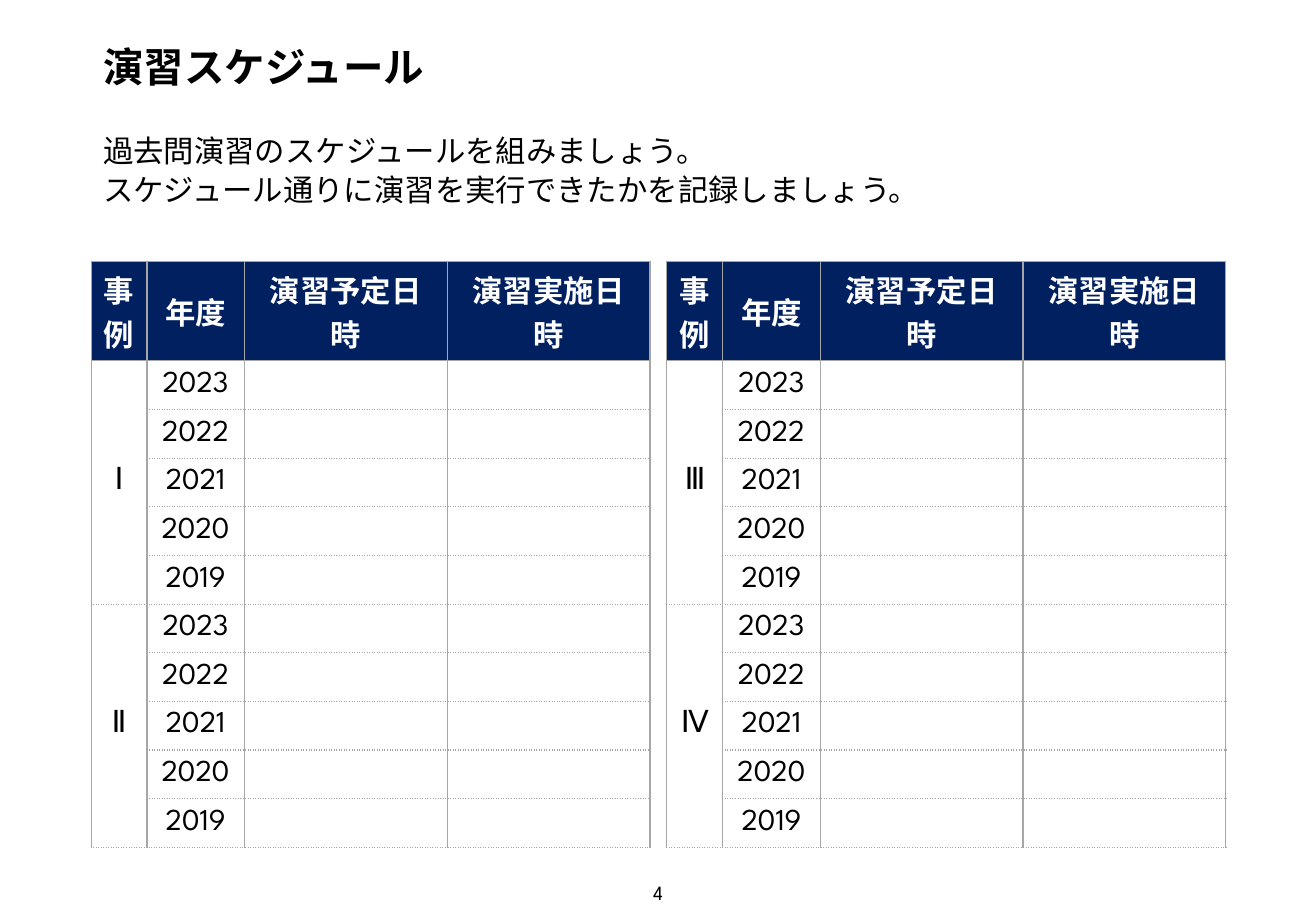
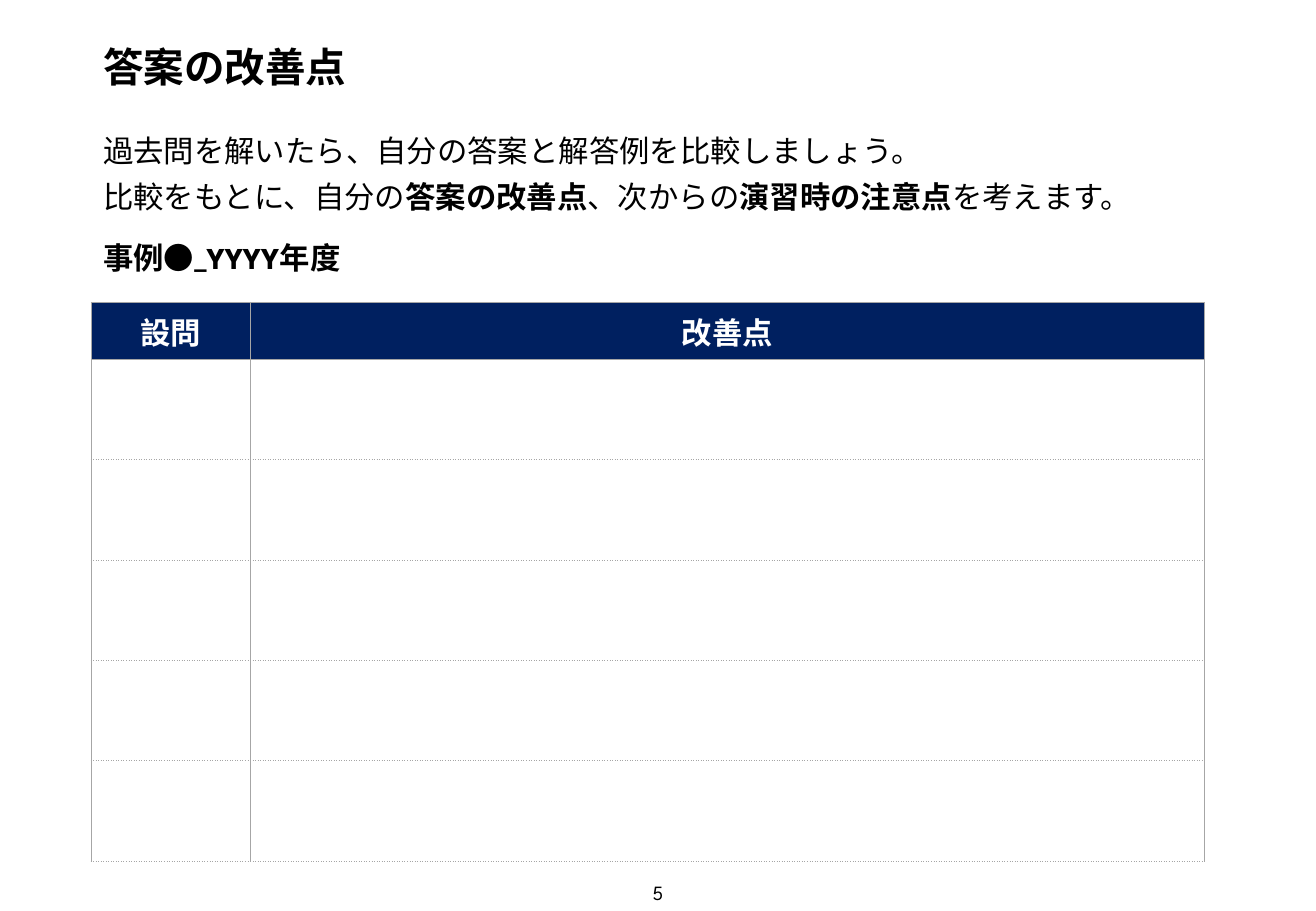
from lxml.etree import SubElement
from pptx import Presentation
from pptx.dml.color import RGBColor
from pptx.enum.text import MSO_ANCHOR, MSO_AUTO_SIZE, PP_ALIGN
from pptx.oxml.ns import qn
from pptx.util import Inches, Pt

COLORS = {"text": "000000", "header": "002060", "header_text": "FFFFFF", "border": "A6A6A6"}
LATIN, JAPANESE = "League Spartan", "Noto Sans CJK JP"
SLIDE_WIDTH, SLIDE_HEIGHT = Inches(10.83), Inches(7.5)

# Lengths are percentages of the slide's width and height.
LEFT, CONTENT_WIDTH = 6.92, 86.24
NUMBER_WIDTH = 22.53
LABEL_HEIGHT = 5.33
SCHEDULE_COLUMNS = (4.25, 7.39, 15.42, 15.42)
SCHEDULE_HEADER, SCHEDULE_ROW = 10.95, 5.33
IMPROVEMENT_COLUMNS = (12.1, 72.48)
IMPROVEMENT_HEADER, IMPROVEMENT_ROW = 6.25, 11.02

YEARS = range(2023, 2018, -1)
SCHEDULE_TITLES = ("事例", "年度", "演習予定日時", "演習実施日時")


def across(percent):
    return round(SLIDE_WIDTH * percent / 100)


def down(percent):
    return round(SLIDE_HEIGHT * percent / 100)


def style_paragraph(para, size, latin=LATIN, bold=False, color="text"):
    font = para.font
    font.size, font.bold = Pt(size), bold
    font.color.rgb = RGBColor.from_string(COLORS[color])
    font.name = latin
    east_asian = SubElement(para._p.pPr.find(qn("a:defRPr")), qn("a:ea"))
    east_asian.set("typeface", JAPANESE)


def add_text(page, left, top, width, height, lines, size, latin=LATIN, bold=False,
             line_spacing=None, align=PP_ALIGN.LEFT, anchor=MSO_ANCHOR.MIDDLE):
    """Add a text box; each line is a list of (text, is_bold) spans."""
    box = page.shapes.add_textbox(across(left), down(top), across(width), down(height))
    frame = box.text_frame
    frame.word_wrap, frame.vertical_anchor = True, anchor
    for index, spans in enumerate(lines):
        para = frame.add_paragraph() if index else frame.paragraphs[0]
        para.alignment = align
        if line_spacing:
            para.line_spacing = Pt(line_spacing)
        if index:
            para.space_before = Pt(3)
        style_paragraph(para, size, latin, bold)
        for text, is_bold in spans:
            span = para.add_run()
            span.text = text
            if is_bold:
                span.font.bold = True
    return frame


def add_page(deck, title, number, lines, line_spacing):
    """Add a page with its title, introduction and page number."""
    page = deck.slides.add_slide(deck.slide_layouts[6])
    add_text(page, LEFT, 4.25, CONTENT_WIDTH, 6.67, [[(title, False)]], 24,
             JAPANESE, bold=True, line_spacing=26)
    add_text(page, (100 - NUMBER_WIDTH) / 2, 96, NUMBER_WIDTH, 4,
             [[(str(number), False)]], 12, align=PP_ALIGN.CENTER)
    add_text(page, LEFT, 13.73, CONTENT_WIDTH, 10.13, lines, 18,
             JAPANESE, line_spacing=line_spacing)
    return page


def set_borders(cell, dotted_sides):
    properties = cell._tc.get_or_add_tcPr()
    for side in "LRTB":
        line = SubElement(properties, qn(f"a:ln{side}"), w=str(Pt(0.75)))
        fill = SubElement(line, qn("a:solidFill"))
        SubElement(fill, qn("a:srgbClr"), val=COLORS["border"])
        SubElement(line, qn("a:prstDash"), val="sysDot" if side in dotted_sides else "solid")


def format_cell(cell, text, row):
    is_header = row == 0
    set_borders(cell, "" if is_header else "B" if row == 1 else "TB")
    if is_header:
        cell.fill.solid()
        cell.fill.fore_color.rgb = RGBColor.from_string(COLORS["header"])
    else:
        cell.fill.background()
    cell.vertical_anchor = MSO_ANCHOR.MIDDLE
    cell.text = text
    para = cell.text_frame.paragraphs[0]
    para.alignment = PP_ALIGN.CENTER
    style_paragraph(para, 18, bold=is_header, color="header_text" if is_header else "text")


def add_table(page, left, top, columns, header_height, row_height, rows):
    """Add a table whose first row is the header, and return it."""
    heights = [header_height] + [row_height] * (len(rows) - 1)
    table = page.shapes.add_table(len(rows), len(columns), across(left), down(top),
                                  across(sum(columns)), down(sum(heights))).table
    table.first_row = table.horz_banding = False
    for column, width in zip(table.columns, columns):
        column.width = across(width)
    for row, (texts, height) in enumerate(zip(rows, heights)):
        table.rows[row].height = down(height)
        for column, text in enumerate(texts):
            format_cell(table.cell(row, column), text, row)
    return table


def add_schedule(page, left, cases):
    rows = [SCHEDULE_TITLES]
    for case in cases:
        rows += [(case if year == YEARS[0] else "", str(year), "", "") for year in YEARS]
    table = add_table(page, left, 28.67, SCHEDULE_COLUMNS, SCHEDULE_HEADER, SCHEDULE_ROW, rows)
    for first in range(1, len(rows), len(YEARS)):
        table.cell(first, 0).merge(table.cell(first + len(YEARS) - 1, 0))


def build_schedule_page(deck):
    page = add_page(deck, "演習スケジュール", 4, [
        [("過去問演習のスケジュールを組みましょう。", False)],
        [("スケジュール通りに演習を実行できたかを記録しましょう。", False)],
    ], 20)
    add_schedule(page, LEFT, "ⅠⅡ")
    add_schedule(page, LEFT + CONTENT_WIDTH - sum(SCHEDULE_COLUMNS), "ⅢⅣ")


def build_improvement_page(deck):
    page = add_page(deck, "答案の改善点", 5, [
        [("過去問を解いたら、自分の答案と解答例を比較しましょう。", False)],
        [("比較をもとに、自分の", False), ("答案の改善点", True), ("、次からの", False),
         ("演習時の注意点", True), ("を考えます。", False)],
    ], 24)
    add_table(page, LEFT, 33.2, IMPROVEMENT_COLUMNS, IMPROVEMENT_HEADER, IMPROVEMENT_ROW,
              [("設問", "改善点")] + [("", "")] * 5)
    frame = add_text(page, LEFT, 25.6, 21.05, LABEL_HEIGHT, [[("事例●_YYYY年度", False)]], 18,
                     bold=True, anchor=MSO_ANCHOR.TOP)
    frame.auto_size = MSO_AUTO_SIZE.SHAPE_TO_FIT_TEXT


def main():
    deck = Presentation()
    deck.slide_width, deck.slide_height = SLIDE_WIDTH, SLIDE_HEIGHT
    build_schedule_page(deck)
    build_improvement_page(deck)
    deck.save("out.pptx")


if __name__ == "__main__":
    main()
